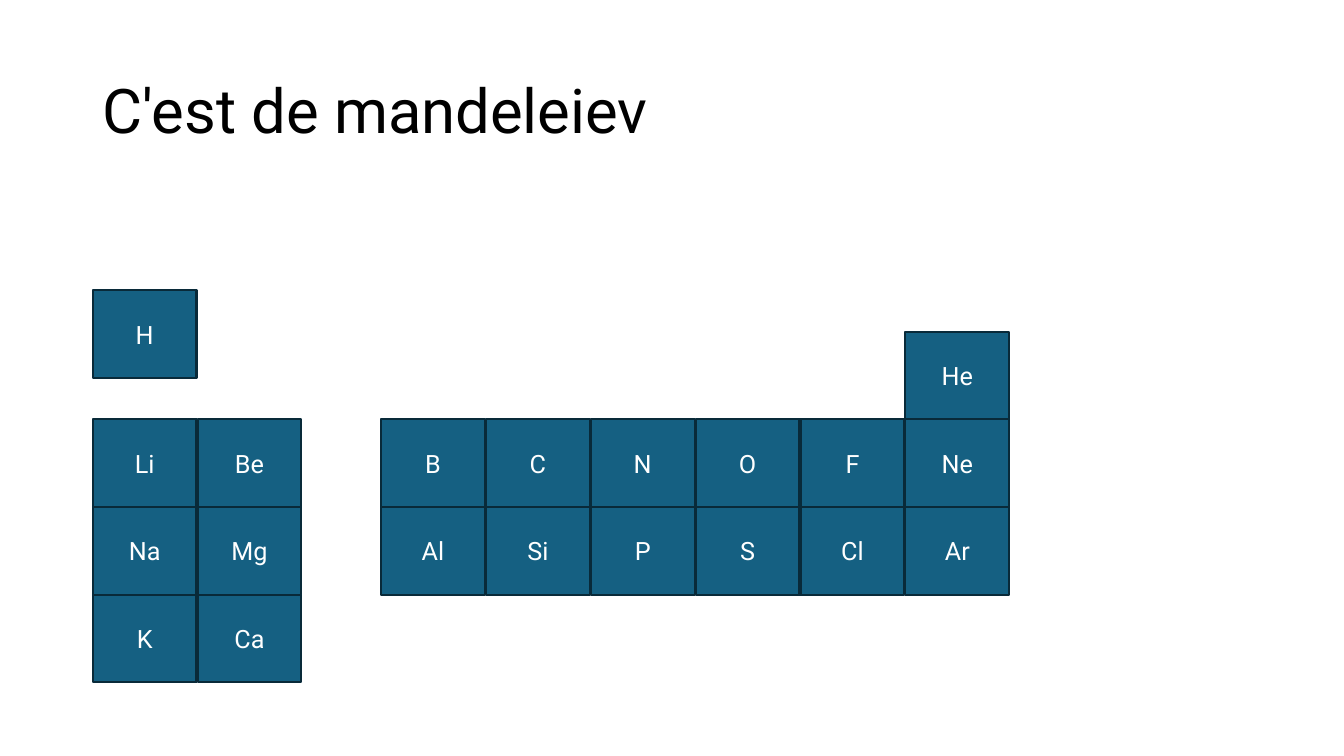
from dataclasses import dataclass

from pptx import Presentation
from pptx.dml.color import RGBColor
from pptx.enum.shapes import MSO_SHAPE as Shape
from pptx.enum.text import MSO_ANCHOR as Anchor, PP_ALIGN as Align
from pptx.util import Inches, Pt


@dataclass(frozen=True)
class Theme:
    font: str = "Roboto"
    title_size: int = 44
    symbol_size: int = 18
    title: str = "000000"
    symbol: str = "FFFFFF"
    fill: str = "156082"
    line: str = "092A39"
    line_width: float = 1.5


@dataclass(frozen=True)
class Grid:
    left: float = 0.92
    top: float = 4.16
    col: float = 1.04
    row: float = 0.87
    cell_width: float = 1.03

    def x(self, col: float) -> float:
        return self.left + col * self.col

    def y(self, row: float) -> float:
        return self.top + row * self.row


@dataclass(frozen=True)
class Block:
    """Adjoining elements, placed by the grid column and row of the first."""
    col: float
    row: float
    rows: tuple[str, ...]


THEME = Theme()
GRID = Grid()
BLOCKS = (
    Block(0, -1.47, ("H",)),
    Block(0, 0, ("Li Be", "Na Mg", "K Ca")),
    Block(2.75, 0, ("B C N O F", "Al Si P S Cl")),
    Block(7.75, -1, ("He", "Ne", "Ar")),
)


def write(sp, text: str, *, size: int, color: str,
          align: Align = Align.LEFT, spacing: float = 1.0) -> None:
    tf = sp.text_frame
    tf.word_wrap = True
    tf.vertical_anchor = Anchor.MIDDLE
    p = tf.paragraphs[0]
    p.alignment = align
    p.line_spacing = spacing
    r = p.add_run()
    r.text = text
    r.font.name = THEME.font
    r.font.size = Pt(size)
    r.font.color.rgb = RGBColor.from_string(color)


def add_element(slide, symbol: str, col: float, row: float) -> None:
    sp = slide.shapes.add_shape(
        Shape.RECTANGLE, Inches(GRID.x(col)), Inches(GRID.y(row)),
        Inches(GRID.cell_width), Inches(GRID.row))
    sp.shadow.inherit = False
    sp.fill.solid()
    sp.fill.fore_color.rgb = RGBColor.from_string(THEME.fill)
    sp.line.color.rgb = RGBColor.from_string(THEME.line)
    sp.line.width = Pt(THEME.line_width)
    write(sp, symbol, size=THEME.symbol_size, color=THEME.symbol,
          align=Align.CENTER)


def add_block(slide, block: Block) -> None:
    for i, symbols in enumerate(block.rows):
        for j, symbol in enumerate(symbols.split()):
            add_element(slide, symbol, block.col + j, block.row + i)


def main() -> None:
    prs = Presentation()
    prs.slide_width, prs.slide_height = Inches(13.33), Inches(7.5)
    slide = prs.slides.add_slide(prs.slide_layouts[6])
    title = slide.shapes.add_textbox(
        Inches(GRID.left), Inches(0.4), Inches(11.5), Inches(1.45))
    write(title, "C'est de mandeleiev", size=THEME.title_size,
          color=THEME.title, spacing=0.9)
    for block in BLOCKS:
        add_block(slide, block)
    prs.save("out.pptx")


if __name__ == "__main__":
    main()
